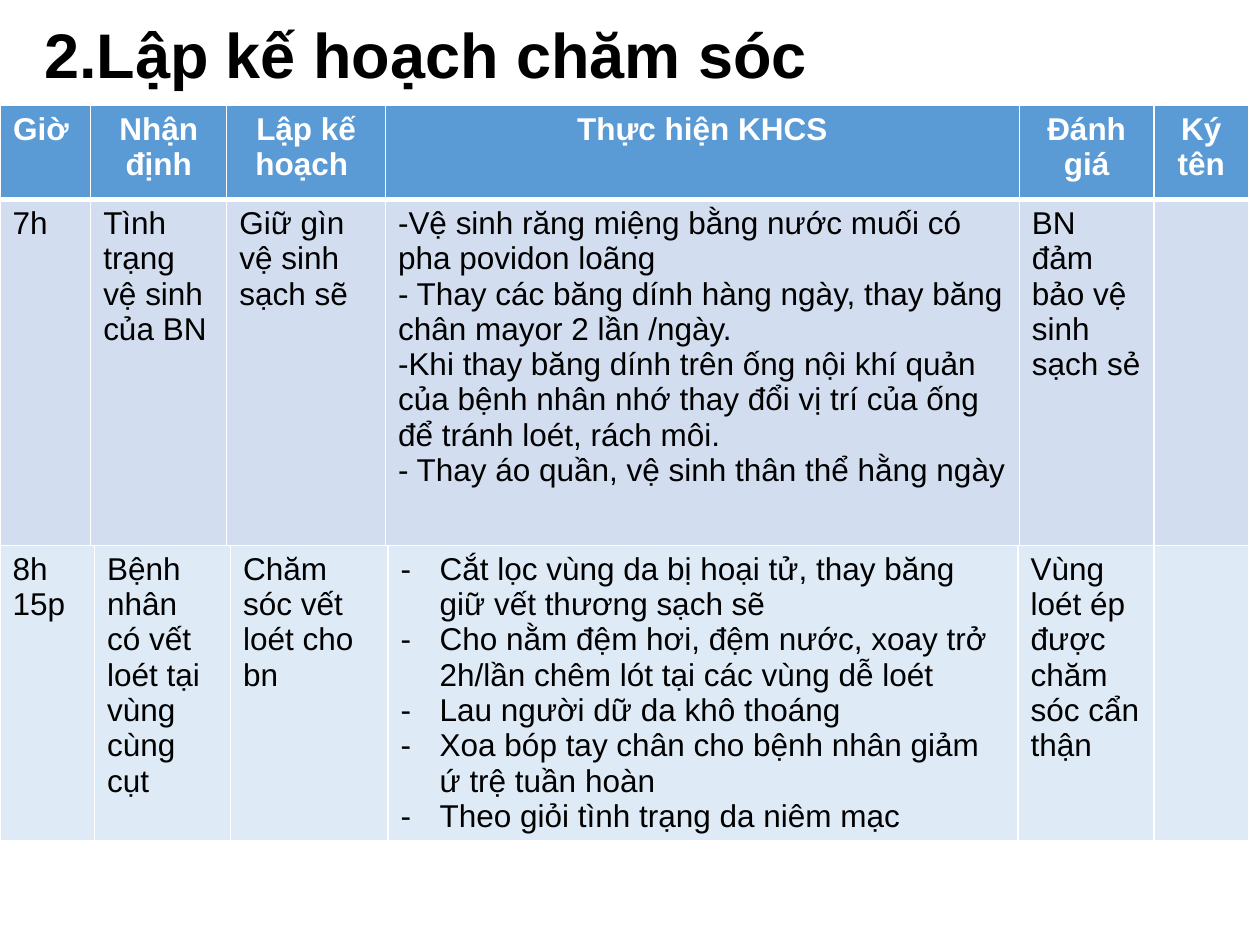
from lxml.etree import SubElement
from pptx import Presentation
from pptx.dml.color import RGBColor
from pptx.enum.text import MSO_ANCHOR, MSO_AUTO_SIZE, PP_ALIGN
from pptx.oxml.ns import qn
from pptx.util import Inches, Pt

COLORS = {
    "black": "000000",
    "white": "FFFFFF",
    "header": "5B9BD5",
    "morning": "D2DEEF",
    "wound": "DEEBF7",
}
HANGING = 0.31


class CareSlide:
    """Holds the style and the slide; places are percentages of its size."""

    font_name = "Arial"
    title_size = 36
    cell_size = 18

    def __init__(self, deck):
        self.width, self.height = deck.slide_width, deck.slide_height
        self.slide = deck.slides.add_slide(deck.slide_layouts[5])

    def x(self, percent):
        return round(self.width * percent / 100)

    def y(self, percent):
        return round(self.height * percent / 100)

    def style(self, paragraph, size, color, bold=False):
        for run in paragraph.runs:
            run.font.name = self.font_name
            run.font.size = Pt(size)
            run.font.bold = bold
            run.font.color.rgb = RGBColor.from_string(COLORS[color])

    def title(self, text, left, top, width, height):
        heading = self.slide.shapes.title
        heading.left, heading.top = self.x(left), self.y(top)
        heading.width, heading.height = self.x(width), self.y(height)
        frame = heading.text_frame
        frame.text = text
        frame.word_wrap = True
        frame.auto_size = MSO_AUTO_SIZE.NONE
        frame.vertical_anchor = MSO_ANCHOR.MIDDLE
        line = frame.paragraphs[0]
        line.alignment = PP_ALIGN.LEFT
        line.line_spacing = 0.9
        self.style(line, self.title_size, "black", bold=True)

    def table(self, top, columns, heights, rows):
        """Each row is (fill, is_header, cell texts)."""
        table = self.slide.shapes.add_table(
            len(rows), len(columns), 0, self.y(top),
            self.x(sum(columns)), self.y(sum(heights))).table
        table.first_row = table.horz_banding = False
        for column, share in zip(table.columns, columns):
            column.width = self.x(share)
        for row, share, (fill, is_header, texts) in zip(table.rows, heights, rows):
            row.height = self.y(share)
            for cell, text in zip(row.cells, texts):
                self.borders(cell, bottom=3 if is_header else 1)
                cell.fill.solid()
                cell.fill.fore_color.rgb = RGBColor.from_string(COLORS[fill])
                self.cell_text(cell, text, is_header)
        return table

    def cell_text(self, cell, text, is_header):
        cell.text_frame.text = text
        for paragraph in cell.text_frame.paragraphs:
            paragraph.alignment = PP_ALIGN.CENTER if is_header else PP_ALIGN.LEFT
            self.style(paragraph, self.cell_size,
                       "white" if is_header else "black", is_header)

    def borders(self, cell, bottom):
        properties = cell._tc.get_or_add_tcPr()
        for side, points in (("L", 1), ("R", 1), ("T", 1), ("B", bottom)):
            line = SubElement(properties, qn(f"a:ln{side}"), w=str(Pt(points)))
            solid = SubElement(line, qn("a:solidFill"))
            SubElement(solid, qn("a:srgbClr"), val=COLORS["white"])

    def dashes(self, cell, hanging=0):
        for paragraph in cell.text_frame.paragraphs:
            properties = paragraph._p.get_or_add_pPr()
            properties.set("marL", str(Inches(hanging)))
            properties.set("indent", str(-Inches(hanging)))
            SubElement(properties, qn("a:buFont"), typeface=self.font_name)
            SubElement(properties, qn("a:buChar"), char="-")


def main():
    deck = Presentation()
    deck.slide_width, deck.slide_height = Inches(10), Inches(7.5)
    care = CareSlide(deck)

    # Heading
    care.title("2.Lập kế hoạch chăm sóc", 2.5, -1.07, 90, 14.4)

    # Column headings and the 7h care
    headings = ["Giờ ", "Nhận định", "Lập kế hoạch ", "Thực hiện KHCS",
                "Đánh giá", "Ký tên"]
    hygiene_steps = [
        "Vệ sinh răng miệng bằng nước muối có pha povidon loãng",
        " Thay các băng dính hàng ngày, thay băng chân mayor 2 lần /ngày.",
        "Khi thay băng dính trên ống nội khí quản của bệnh nhân nhớ thay đổi "
        "vị trí của ống để tránh loét, rách môi.",
        " Thay áo quần, vệ sinh thân thể hằng ngày",
    ]
    hygiene = ["7h", "Tình trạng vệ sinh của BN", "Giữ gìn vệ sinh sạch sẽ",
               "\n".join(hygiene_steps), "BN đảm bảo vệ sinh sạch sẻ", ""]
    morning = care.table(
        11.13, [7.2, 10.8, 12.6, 50.3, 10.7, 7.5], [10, 36.6],
        [("header", True, headings), ("morning", False, hygiene)])
    care.dashes(morning.cell(1, 3))

    # The 8h15 wound care
    wound_steps = [
        "Cắt lọc vùng da bị hoại tử, thay băng giữ vết thương sạch sẽ",
        "Cho nằm đệm hơi, đệm nước, xoay trở 2h/lần chêm lót tại các vùng dễ loét",
        "Lau người dữ da khô thoáng",
        "Xoa bóp tay chân cho bệnh nhân giảm ứ trệ tuần hoàn",
        "Theo giỏi tình trạng da niêm mạc",
    ]
    wound_care = ["8h\n15p", "Bệnh nhân có vết loét tại vùng cùng cụt",
                  "Chăm sóc vết loét cho bn", "\n".join(wound_steps),
                  "Vùng loét ép được chăm sóc cẩn thận", ""]
    wound = care.table(57.73, [7.5, 10.8, 12.5, 50, 10.8, 7.5], [31.1],
                       [("wound", False, wound_care)])
    care.dashes(wound.cell(0, 3), HANGING)

    deck.save("out.pptx")


if __name__ == "__main__":
    main()
